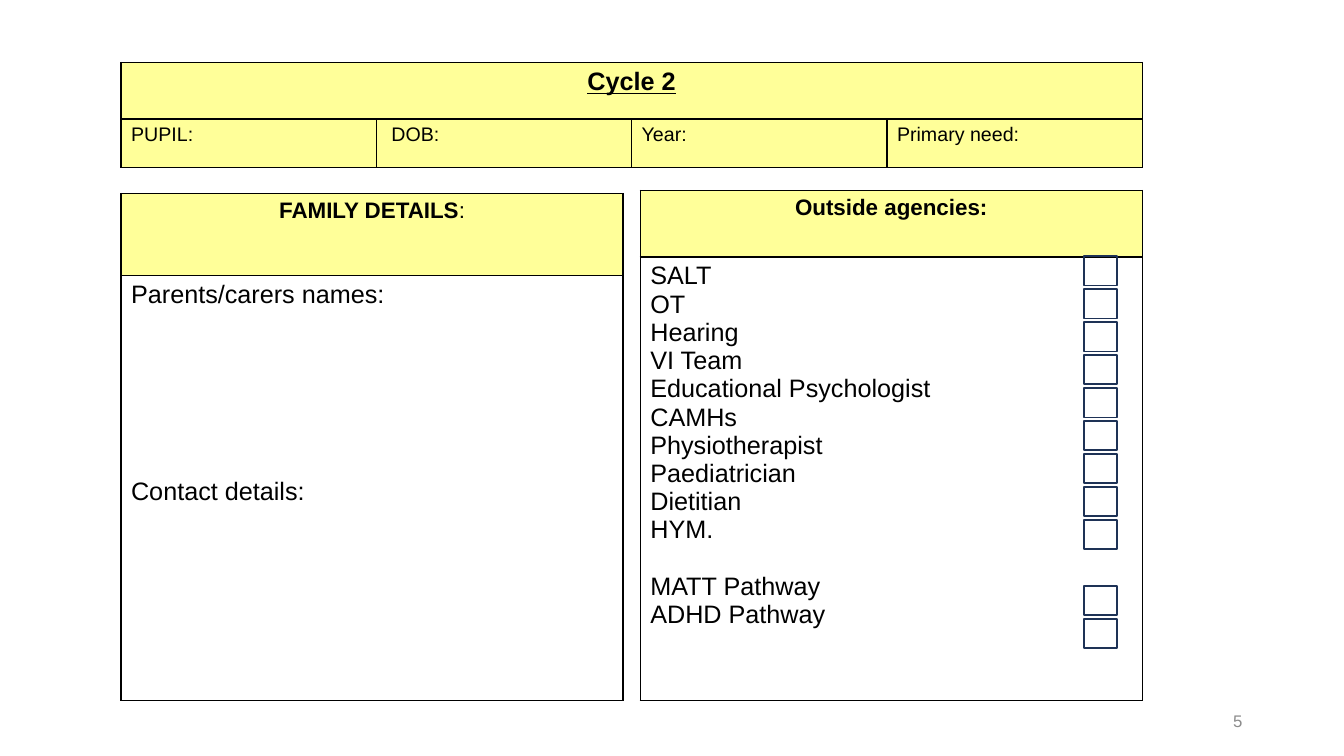
"""Build the pupil details form for cycle 2."""
from dataclasses import dataclass

from lxml import etree
from pptx import Presentation, util as u
from pptx.dml.color import RGBColor
from pptx.enum import shapes, text
from pptx.oxml.ns import qn


@dataclass(frozen=True)
class Theme:
    """Hold the colours, type sizes and line width of the form."""
    font: str = "Arial"
    ink: str = "000000"
    band: str = "FFFF99"
    paper: str = "FFFFFF"
    box: str = "1E3256"
    muted: str = "8C8C8C"
    large: int = 18
    heading: int = 16
    label: int = 14
    small: int = 12
    line: int = 1


THEME = Theme()
LEFT, RIGHT_TABLE, PANEL_WIDTH = 1.2, 6.35, 4.98
PUPIL_FIELDS = ["PUPIL:", "DOB:", "Year:", "Primary need:"]
FAMILY_FIELDS = ["Parents/carers names:", "Contact details:"]
AGENCIES = ["SALT", "OT", "Hearing", "VI Team", "Educational Psychologist", "CAMHs",
            "Physiotherapist", "Paediatrician", "Dietitian", "HYM.",
            "MATT Pathway", "ADHD Pathway"]
BOX_SLOTS = [*range(9), 10, 11]
BOX_TOP, BOX_SPAN = 2.54, 3.6


def add_run(paragraph, words, size, color=THEME.ink, bold=False, underline=False):
    """Add one formatted run to a paragraph."""
    run = paragraph.add_run()
    run.text = words
    font = run.font
    font.name, font.size = THEME.font, u.Pt(size)
    font.bold, font.underline = bold, underline
    font.color.rgb = RGBColor.from_string(color)


def add_lines(frame, lines, size, gaps=None):
    """Write one paragraph per line, with space in points before chosen lines."""
    for index, words in enumerate(lines):
        paragraph = frame.add_paragraph() if index else frame.paragraphs[0]
        if gaps and words in gaps:
            paragraph.space_before = u.Pt(gaps[words])
        add_run(paragraph, words, size)


def add_heading(cell, words, size, **style):
    """Write a bold centred heading in a cell and return its paragraph."""
    paragraph = cell.text_frame.paragraphs[0]
    paragraph.alignment = text.PP_ALIGN.CENTER
    add_run(paragraph, words, size, bold=True, **style)
    return paragraph


def style_cell(cell, fill):
    """Give a cell its four borders and its fill."""
    properties = cell._tc.get_or_add_tcPr()
    for side in ("a:lnL", "a:lnR", "a:lnT", "a:lnB"):
        line = etree.SubElement(properties, qn(side), w=str(u.Pt(THEME.line)))
        solid = etree.SubElement(line, qn("a:solidFill"))
        etree.SubElement(solid, qn("a:srgbClr"), val=THEME.ink)
    cell.fill.solid()
    cell.fill.fore_color.rgb = RGBColor.from_string(fill)


def add_form_table(slide, left, top, width, heights, fills, columns=1):
    """Add a bordered table with one fill per row and equal columns."""
    frame = slide.shapes.add_table(len(heights), columns, u.Inches(left), u.Inches(top),
                                   u.Inches(width), u.Inches(sum(heights)))
    table = frame.table
    table.first_row = table.horz_banding = False
    for column in table.columns:
        column.width = u.Inches(width / columns)
    for row, height, fill in zip(table.rows, heights, fills):
        row.height = u.Inches(height)
        for cell in row.cells:
            style_cell(cell, fill)
    return table


def add_pupil_table(slide):
    """Add the cycle heading and the pupil fields."""
    table = add_form_table(slide, LEFT, 0.62, 10.13, [0.56, 0.48],
                           [THEME.band, THEME.band], len(PUPIL_FIELDS))
    table.cell(0, 0).merge(table.cell(0, len(PUPIL_FIELDS) - 1))
    add_heading(table.cell(0, 0), "Cycle 2", THEME.large, underline=True)
    for column, field in enumerate(PUPIL_FIELDS):
        add_lines(table.cell(1, column).text_frame, [field], THEME.label)
    table.cell(1, 1).margin_left = u.Inches(0.15)


def add_panel(slide, left, top, heights, heading, lines, gaps):
    """Add a table with a heading above a list and return the heading."""
    table = add_form_table(slide, left, top, PANEL_WIDTH, heights,
                           [THEME.band, THEME.paper])
    add_lines(table.cell(1, 0).text_frame, lines, THEME.large, gaps)
    return add_heading(table.cell(0, 0), heading, THEME.heading)


def add_checkbox(slide, slot):
    """Add an empty tick box at a slot of the agency list."""
    top = BOX_TOP + BOX_SPAN * slot / max(BOX_SLOTS)
    box = slide.shapes.add_shape(shapes.MSO_SHAPE.RECTANGLE, u.Inches(10.75),
                                 u.Inches(top), u.Inches(0.33), u.Inches(0.29))
    box.shadow.inherit = False
    box.fill.background()
    box.line.color.rgb = RGBColor.from_string(THEME.box)
    box.line.width = u.Pt(THEME.line)


def add_page_number(slide, number):
    """Add the page number at the lower right."""
    box = slide.shapes.add_textbox(u.Inches(9.42), u.Inches(6.95),
                                   u.Inches(3), u.Inches(0.4))
    frame = box.text_frame
    frame.word_wrap = True
    frame.vertical_anchor = text.MSO_ANCHOR.MIDDLE
    paragraph = frame.paragraphs[0]
    paragraph.alignment = text.PP_ALIGN.RIGHT
    add_run(paragraph, number, THEME.small, THEME.muted)


def main():
    """Build and save the form."""
    presentation = Presentation()
    presentation.slide_width = u.Inches(13.33)
    presentation.slide_height = u.Inches(7.5)
    slide = presentation.slides.add_slide(presentation.slide_layouts[6])
    add_page_number(slide, "5")
    add_pupil_table(slide)
    family = add_panel(slide, LEFT, 1.92, [0.81, 4.22], "FAMILY DETAILS",
                       FAMILY_FIELDS, {"Contact details:": 120.6})
    add_run(family, ":", THEME.heading)
    add_panel(slide, RIGHT_TABLE, 1.89, [0.66, 4.4], "Outside agencies:",
              AGENCIES, {"MATT Pathway": 20.1})
    for slot in BOX_SLOTS:
        add_checkbox(slide, slot)
    presentation.save("out.pptx")


if __name__ == "__main__":
    main()
